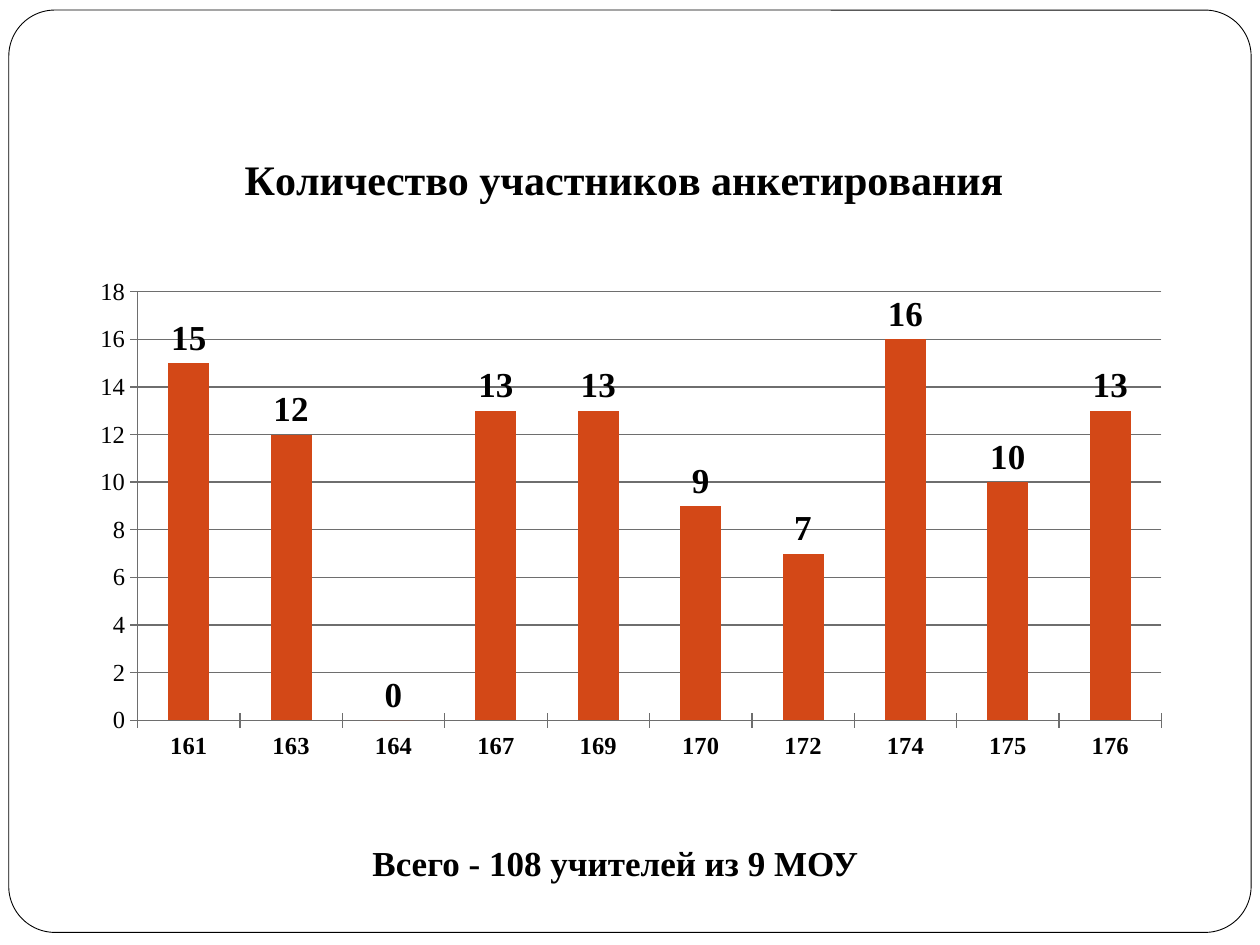
from lxml import etree
from pptx import Presentation
from pptx.chart.data import CategoryChartData
from pptx.dml.color import RGBColor
from pptx.enum.chart import XL_CHART_TYPE, XL_LABEL_POSITION, XL_TICK_MARK
from pptx.enum.shapes import MSO_SHAPE
from pptx.enum.text import PP_ALIGN
from pptx.oxml.ns import qn
from pptx.util import Inches, Pt

BLACK = RGBColor(0x00, 0x00, 0x00)
WHITE = RGBColor(0xFF, 0xFF, 0xFF)
GREY = RGBColor(0x6E, 0x6E, 0x6E)
ORANGE = RGBColor(0xD3, 0x48, 0x17)
COLUMN = XL_CHART_TYPE.COLUMN_CLUSTERED
OUTSIDE_END = XL_LABEL_POSITION.OUTSIDE_END
CROSS = XL_TICK_MARK.CROSS
NO_TICK = XL_TICK_MARK.NONE
ROUNDED = MSO_SHAPE.ROUNDED_RECTANGLE
CENTER = PP_ALIGN.CENTER

PARTICIPANTS = {"161": 15, "163": 12, "164": 0, "167": 13, "169": 13,
                "170": 9, "172": 7, "174": 16, "175": 10, "176": 13}


def set_layout(parent, after, **values):
    """Give a chart part a manual layout, in fractions of the chart."""
    for old in parent.findall(qn("c:layout")):
        parent.remove(old)
    layout = etree.Element(qn("c:layout"))
    manual = etree.SubElement(layout, qn("c:manualLayout"))
    for name, value in values.items():
        etree.SubElement(manual, qn(f"c:{name}")).set("val", str(value))
    if after is None:
        parent.insert(0, layout)
    else:
        after.addnext(layout)


class SlideBuilder:
    font_name = "Times New Roman"

    def __init__(self, slide):
        self.s = slide

    def style(self, font, size, bold=False):
        font.name = self.font_name
        font.size = Pt(size)
        font.bold = bold
        font.color.rgb = BLACK

    def frame(self, left, top, width, height):
        sp = self.s.shapes.add_shape(ROUNDED, Inches(left), Inches(top),
                                     Inches(width), Inches(height))
        sp.adjustments[0] = 0.05
        sp.shadow.inherit = False
        sp.fill.solid()
        sp.fill.fore_color.rgb = WHITE
        sp.line.color.rgb = BLACK
        sp.line.width = Pt(0.5)

    def text(self, left, top, width, height, text, size):
        sp = self.s.shapes.add_textbox(Inches(left), Inches(top),
                                       Inches(width), Inches(height))
        tf = sp.text_frame
        tf.word_wrap = True
        tf.text = text
        p = tf.paragraphs[0]
        p.alignment = CENTER
        self.style(p.runs[0].font, size, bold=True)

    def column_chart(self, left, top, width, height, title, values):
        data = CategoryChartData()
        data.categories = list(values)
        data.add_series("Series 1", list(values.values()))
        chart = self.s.shapes.add_chart(COLUMN, Inches(left), Inches(top),
                                        Inches(width), Inches(height), data).chart
        self.style(chart.font, 10)
        chart.has_legend = False

        tf = chart.chart_title.text_frame
        tf.text = title
        self.style(tf.paragraphs[0].runs[0].font, 24, bold=True)
        chart_title = chart.chart_title._element
        set_layout(chart_title, chart_title.find(qn("c:tx")),
                   xMode="edge", yMode="edge", x=0.16, y=0.04)
        chart.chart_title.include_in_layout = False

        plot = chart.plots[0]
        plot.gap_width = 150
        plot.vary_by_categories = False
        series = plot.series[0]
        series.format.fill.solid()
        series.format.fill.fore_color.rgb = ORANGE
        labels = series.data_labels
        labels.show_value = True
        labels.position = OUTSIDE_END
        self.style(labels.font, 20, bold=True)

        for axis, bold in ((chart.category_axis, True), (chart.value_axis, False)):
            self.style(axis.tick_labels.font, 14, bold)
            axis.major_tick_mark = CROSS
            axis.minor_tick_mark = NO_TICK
            axis.format.line.color.rgb = GREY
        axis = chart.value_axis
        axis.minimum_scale, axis.maximum_scale, axis.major_unit = 0, 18, 2
        axis.has_major_gridlines = True
        axis.major_gridlines.format.line.color.rgb = GREY

        plot_area = chart._chartSpace.chart.plotArea
        set_layout(plot_area, None, layoutTarget="inner", xMode="edge",
                   yMode="edge", x=0.073, y=0.246, w=0.896, h=0.6)


def main():
    prs = Presentation()
    prs.slide_width, prs.slide_height = Inches(10), Inches(7.5)
    blank_layout = prs.slide_layouts[6]
    builder = SlideBuilder(prs.slides.add_slide(blank_layout))
    builder.frame(0.07, 0.08, 9.86, 7.32)
    builder.column_chart(0.43, 0.92, 9.07, 5.67,
                         "Количество участников анкетирования", PARTICIPANTS)
    builder.text(1.22, 6.63, 7.4, 0.44, "Всего - 108 учителей из 9 МОУ ", 20)
    prs.save("out.pptx")


if __name__ == "__main__":
    main()
